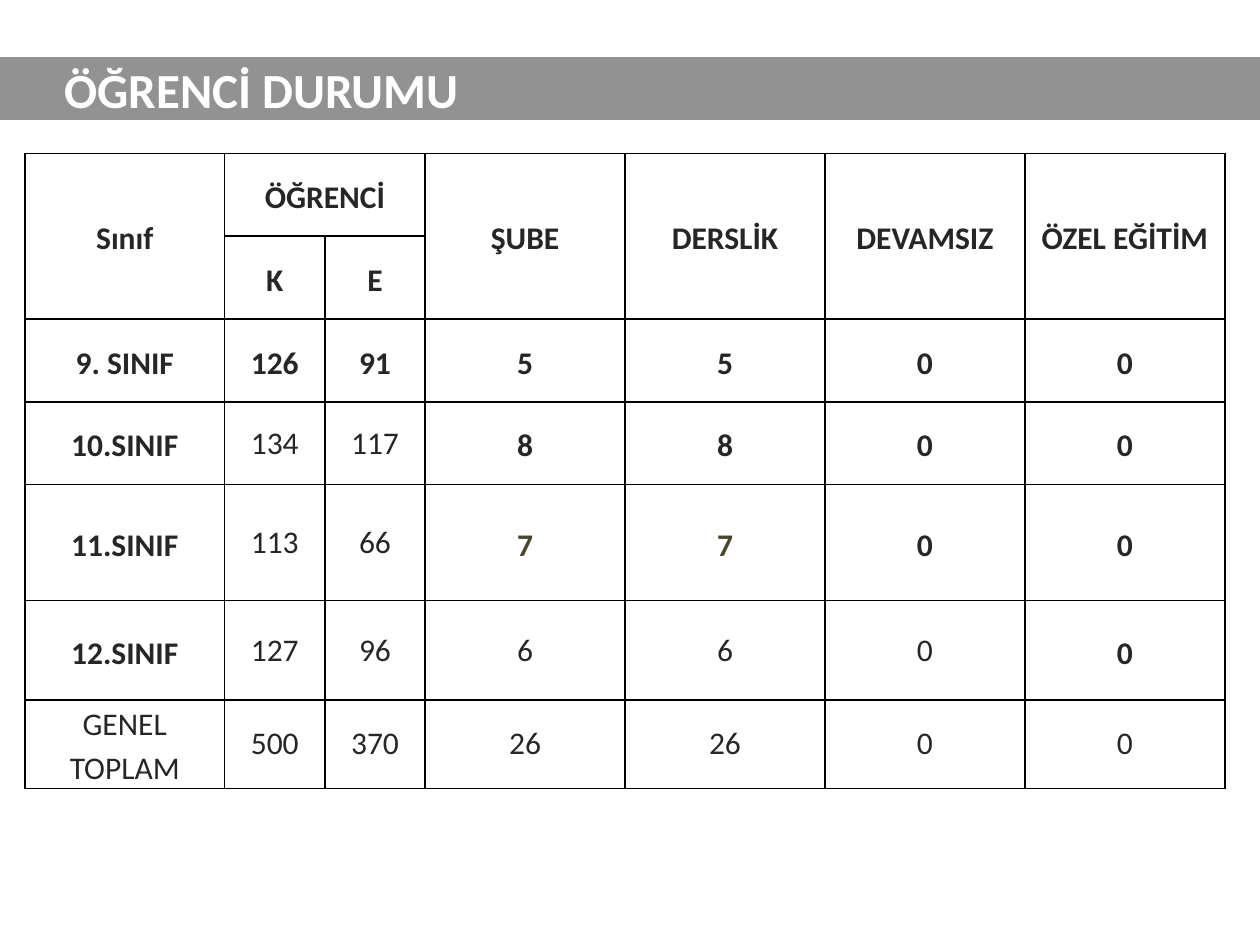
from dataclasses import dataclass

from lxml.etree import SubElement
from pptx import Presentation
from pptx.dml.color import RGBColor
from pptx.enum.text import MSO_ANCHOR, PP_ALIGN
from pptx.oxml.ns import qn
from pptx.util import Cm, Pt


@dataclass(frozen=True)
class Theme:
    font: str = "Calibri"
    title_size: int = 28
    table_size: int = 18
    band: str = "929292"
    white: str = "FFFFFF"
    ink: str = "262626"
    olive: str = "4A452A"
    border: str = "000000"


theme = Theme()


def write(frame, text, size, color, bold=True, align=PP_ALIGN.LEFT, spacing=1.0):
    """Fill a text frame, one paragraph per line of text."""
    frame.text = text
    for paragraph in frame.paragraphs:
        paragraph.alignment = align
        paragraph.line_spacing = spacing
        paragraph.space_before = Pt(0)
        for run in paragraph.runs:
            run.font.name = theme.font
            run.font.size = Pt(size)
            run.font.bold = bold
            run.font.color.rgb = RGBColor.from_string(color)


def draw_borders(cell):
    properties = cell._tc.get_or_add_tcPr()
    for side in ("lnL", "lnR", "lnT", "lnB"):
        line = SubElement(properties, qn(f"a:{side}"), w=str(Pt(1)))
        fill = SubElement(line, qn("a:solidFill"))
        SubElement(fill, qn("a:srgbClr"), val=theme.border)


presentation = Presentation()
presentation.slide_width, presentation.slide_height = Cm(25.4), Cm(19.05)
slide = presentation.slides.add_slide(presentation.slide_layouts[5])

# Title band
title = slide.shapes.title
title.left, title.top, title.width, title.height = Cm(0), Cm(1.15), Cm(25.4), Cm(1.27)
title.fill.solid()
title.fill.fore_color.rgb = RGBColor.from_string(theme.band)
title.text_frame.margin_left = Cm(1.3)
title.text_frame.vertical_anchor = MSO_ANCHOR.MIDDLE
write(title.text_frame, "ÖĞRENCİ DURUMU", theme.title_size, theme.white)

# Student table
students = [
    ["Sınıf", "ÖĞRENCİ", "", "ŞUBE", "DERSLİK", "DEVAMSIZ", "ÖZEL EĞİTİM"],
    ["", "K", "E", "", "", "", ""],
    ["9. SINIF", "126", "91", "5", "5", "0", "0"],
    ["10.SINIF", "134", "117", "8", "8", "0", "0"],
    ["11.SINIF", "113", "66", "7", "7", "0", "0"],
    ["12.SINIF", "127", "96", "6", "6", "0", "0"],
    ["GENEL\nTOPLAM", "500", "370", "26", "26", "0", "0"],
]
column_widths = [4.03, 2.02, 2.02, 4.03, 4.03, 4.03, 4.03]
row_heights = [1.67, 1.67, 1.67, 1.67, 2.34, 2, 1.67]
regular_columns = {3: range(1, 3), 4: range(1, 3), 5: range(1, 6), 6: range(7)}
olive_cells = {(4, 3), (4, 4)}

table = slide.shapes.add_table(
    len(students), len(column_widths), Cm(0.5), Cm(3.09),
    Cm(sum(column_widths)), Cm(sum(row_heights)),
).table
table.first_row = table.horz_banding = False
for column, width in zip(table.columns, column_widths):
    column.width = Cm(width)
for row, height in zip(table.rows, row_heights):
    row.height = Cm(height)

for r, values in enumerate(students):
    for c, value in enumerate(values):
        cell = table.cell(r, c)
        draw_borders(cell)
        cell.fill.solid()
        cell.fill.fore_color.rgb = RGBColor.from_string(theme.white)
        cell.margin_left = cell.margin_right = Cm(0.18)
        cell.margin_top = cell.margin_bottom = Cm(0)
        cell.vertical_anchor = MSO_ANCHOR.MIDDLE
        bold = c not in regular_columns.get(r, ())
        write(
            cell.text_frame, value, theme.table_size,
            theme.olive if (r, c) in olive_cells else theme.ink,
            bold=bold, align=PP_ALIGN.CENTER,
            spacing=1.15 if bold or c == 0 else 1.0,
        )

table.cell(0, 1).merge(table.cell(0, 2))
for c in (0, 3, 4, 5, 6):
    table.cell(0, c).merge(table.cell(1, c))

presentation.save("out.pptx")
